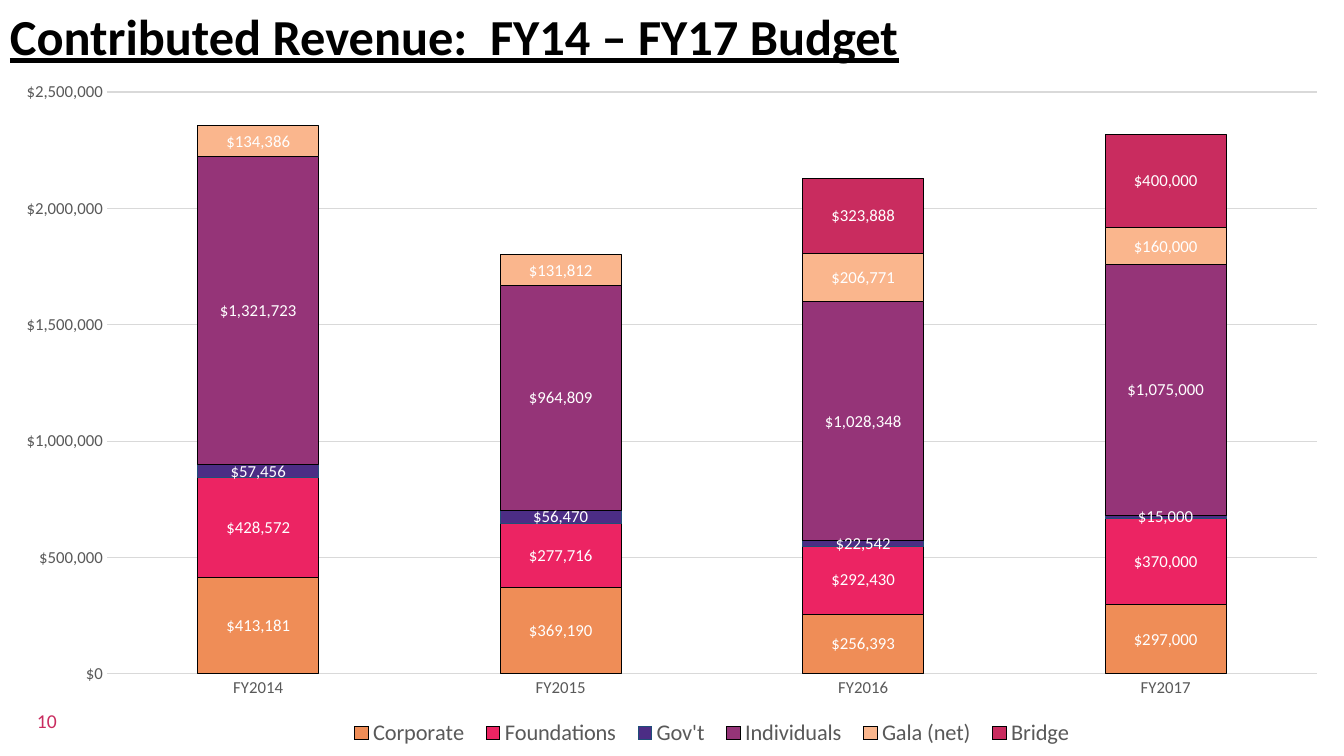
from typing import NamedTuple, Optional

from lxml import etree
from pptx import Presentation
from pptx.chart.data import CategoryChartData
from pptx.dml.color import RGBColor
from pptx.enum.chart import XL_CHART_TYPE, XL_LABEL_POSITION, XL_LEGEND_POSITION, XL_TICK_MARK
from pptx.enum.text import MSO_ANCHOR
from pptx.oxml.ns import qn
from pptx.util import Emu, Pt

EMU_PER_PX = 914400 / 100.8
FONT = "Calibri"
DOLLARS = '"$"#,##0'
GREY, GRID = "595959", "D9D9D9"
YEARS = ["FY2014", "FY2015", "FY2016", "FY2017"]


class Box(NamedTuple):
    left: int
    top: int
    width: int
    height: int


class Source(NamedTuple):
    name: str
    amounts: list[Optional[int]]
    fill: str
    outline: str = "000000"


SOURCES = [
    Source("Corporate", [413181, 369190, 256393, 297000], "EF8D57"),
    Source("Foundations", [428572, 277716, 292430, 370000], "EC2463"),
    Source("Gov't", [57456, 56470, 22542, 15000], "4C2D85", "1F4E79"),
    Source("Individuals", [1321723, 964809, 1028348, 1075000], "953478"),
    Source("Gala (net)", [134386, 131812, 206771, 160000], "FAB68D"),
    Source("Bridge", [0, None, 323888, 400000], "C92C5F"),
]
CHART = Box(0, 69, 1344, 687)
PLOT = Box(107, 92, 1210, 582)
LEGEND = Box(340, 717, 744, 32)


def px(length: int) -> Emu:
    return Emu(round(length * EMU_PER_PX))


def rgb(color: str) -> RGBColor:
    return RGBColor.from_string(color)


def set_font(font, size: int, color: str) -> None:
    font.name, font.size = FONT, Pt(size)
    font.color.rgb = rgb(color)


def set_line(line, color: str) -> None:
    line.color.rgb = rgb(color)
    line.width = Pt(0.75)


def add_text(slide, box: Box, text: str, size: int, color: str,
             anchor: MSO_ANCHOR = MSO_ANCHOR.TOP):
    frame = slide.shapes.add_textbox(*map(px, box)).text_frame
    frame.word_wrap = True
    frame.vertical_anchor = anchor
    paragraph = frame.paragraphs[0]
    paragraph.text = text
    set_font(paragraph.font, size, color)
    return paragraph


def place(part, index: int, box: Box, inner: bool = False) -> None:
    """Pin a chart part to a box given in slide px."""
    for old in part.findall(qn("c:layout")):
        part.remove(old)
    layout = etree.Element(qn("c:layout"))
    part.insert(index, layout)
    manual = etree.SubElement(layout, qn("c:manualLayout"))
    settings = {"layoutTarget": "inner"} if inner else {}
    settings |= {
        "xMode": "edge", "yMode": "edge",
        "x": (box.left - CHART.left) / CHART.width,
        "y": (box.top - CHART.top) / CHART.height,
        "w": box.width / CHART.width,
        "h": box.height / CHART.height,
    }
    for tag, value in settings.items():
        etree.SubElement(manual, qn(f"c:{tag}")).set("val", str(value))


def hide_label(labels, point: int) -> None:
    label = etree.Element(qn("c:dLbl"))
    etree.SubElement(label, qn("c:idx")).set("val", str(point))
    etree.SubElement(label, qn("c:delete")).set("val", "1")
    labels._element.insert(0, label)


def style_series(series, source: Source) -> None:
    series.format.fill.solid()
    series.format.fill.fore_color.rgb = rgb(source.fill)
    set_line(series.format.line, source.outline)
    series.invert_if_negative = False
    labels = series.data_labels
    labels.show_value = True
    labels.position = XL_LABEL_POSITION.CENTER
    labels.number_format = DOLLARS
    labels.number_format_is_linked = False
    set_font(labels.font, 12, "FFFFFF")
    for point, amount in enumerate(source.amounts):
        if amount == 0:
            hide_label(labels, point)


def style_axes(chart) -> None:
    years, dollars = chart.category_axis, chart.value_axis
    for axis in (years, dollars):
        axis.major_tick_mark = axis.minor_tick_mark = XL_TICK_MARK.NONE
        set_font(axis.tick_labels.font, 12, GREY)
    set_line(years.format.line, GRID)
    dollars.format.line.fill.background()
    dollars.minimum_scale, dollars.maximum_scale = 0, 2500000
    dollars.major_unit = 500000
    dollars.tick_labels.number_format = DOLLARS
    dollars.tick_labels.number_format_is_linked = False
    set_line(dollars.major_gridlines.format.line, GRID)


def add_revenue_chart(slide) -> None:
    revenue = CategoryChartData(number_format=DOLLARS)
    revenue.categories = YEARS
    for source in SOURCES:
        revenue.add_series(source.name, source.amounts)
    chart = slide.shapes.add_chart(
        XL_CHART_TYPE.COLUMN_STACKED, *map(px, CHART), revenue).chart
    set_font(chart.font, 10, "000000")
    chart.has_title = False
    bars = chart.plots[0]
    bars.gap_width, bars.overlap = 150, 100
    bars.vary_by_categories = False
    for series, source in zip(bars.series, SOURCES):
        style_series(series, source)
    style_axes(chart)
    chart.has_legend = True
    legend = chart.legend
    legend.position = XL_LEGEND_POSITION.BOTTOM
    legend.include_in_layout = False
    set_font(legend.font, 16, GREY)
    place(chart._chartSpace.chart.plotArea, 0, PLOT, inner=True)
    place(legend._element, 1, LEGEND)


def main() -> None:
    deck = Presentation()
    deck.slide_width, deck.slide_height = px(1344), px(756)
    slide = deck.slides.add_slide(deck.slide_layouts[6])
    add_text(slide, Box(27, 701, 302, 40), "10", 14, "C92C5F", MSO_ANCHOR.MIDDLE)
    add_revenue_chart(slide)
    title = add_text(slide, Box(0, 0, 1041, 72),
                     "Contributed Revenue:  FY14 – FY17 Budget", 36, "000000")
    title.font.bold = title.font.underline = True
    deck.save("out.pptx")


if __name__ == "__main__":
    main()
